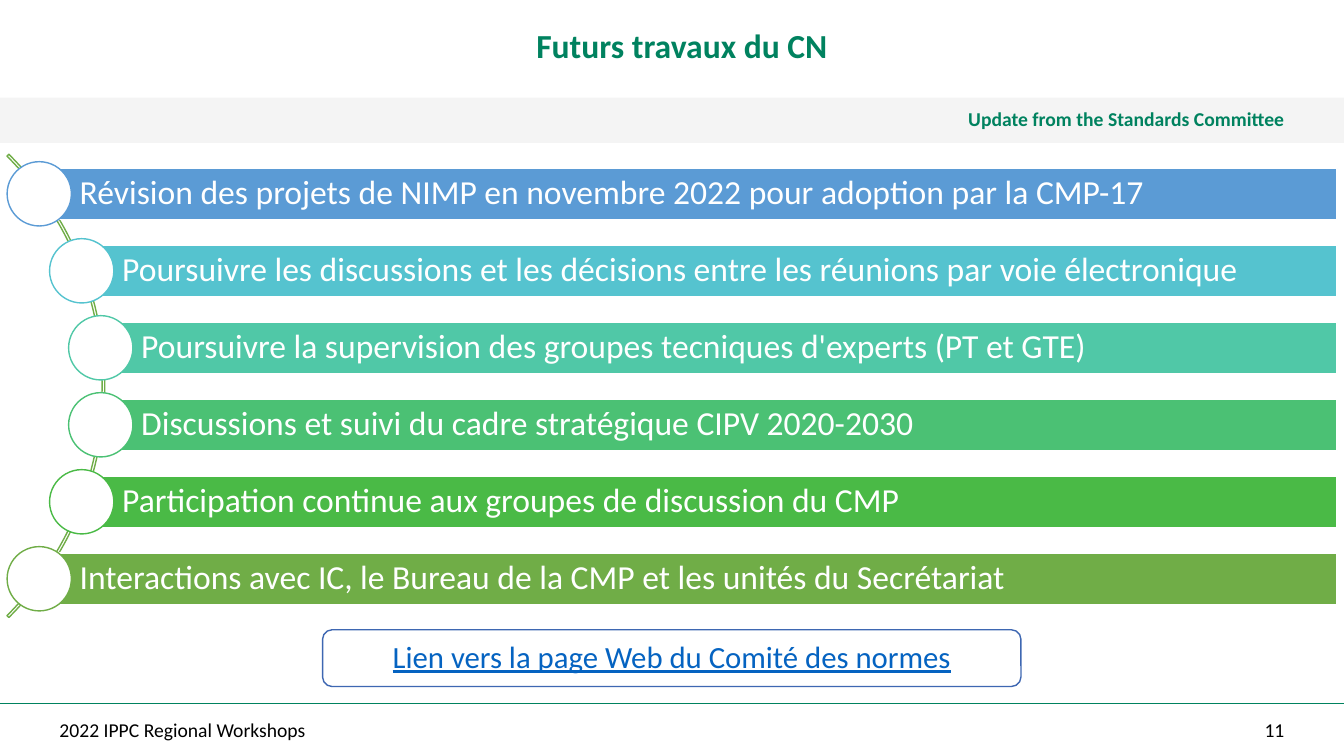
from dataclasses import dataclass

from pptx import Presentation, util as u
from pptx.dml.color import RGBColor
from pptx.enum import shapes, text
from pptx.oxml.ns import qn
from lxml import etree


@dataclass(frozen=True)
class Theme:
    font: str = "Calibri"
    green: str = "00825F"
    white: str = "FFFFFF"
    black: str = "000000"
    band: str = "E7E6E6"
    band_alpha: int = 42
    link: str = "0563C1"
    link_border: str = "3E67B2"
    arc: str = "70AD47"
    title_size: int = 24
    row_size: int = 24
    link_size: int = 22
    small_size: int = 14


THEME = Theme()
WIDTH, HEIGHT = 33.87, 19.05
MARGIN = 1.5
LEFT, CENTER, RIGHT = text.PP_ALIGN.LEFT, text.PP_ALIGN.CENTER, text.PP_ALIGN.RIGHT
SHAPE = shapes.MSO_SHAPE

ROWS = [
    ("Révision des projets de NIMP en novembre 2022 pour adoption par la CMP-17", "5B9BD5", 0.99),
    ("Poursuivre les discussions et les décisions entre les réunions par voie électronique", "55C3CF", 2.06),
    ("Poursuivre la supervision des groupes tecniques d'experts (PT et GTE)", "50C8A7", 2.54),
    ("Discussions et suivi du cadre stratégique CIPV 2020-2030", "4BC174", 2.54),
    ("Participation continue aux groupes de discussion du CMP", "4ABA46", 2.06),
    ("Interactions avec IC, le Bureau de la CMP et les unités du Secrétariat", "70AD47", 0.99),
]
ROW_TOP, ROW_PITCH, ROW_HEIGHT, ROW_RIGHT = 4.24, 1.94, 1.29, 33.7
CIRCLE = 1.62


def set_all(target, values):
    for name, value in values.items():
        setattr(target, name, value)


class SlideBuilder:
    def __init__(self, presentation, theme):
        self.theme = theme
        self.slide = presentation.slides.add_slide(presentation.slide_layouts[5])

    def add_words(self, shape, words, size, color, align=LEFT, insets=(0, 0, 0, 0), **font):
        frame = shape.text_frame
        left, top, right, bottom = map(u.Cm, insets)
        set_all(frame, {
            "word_wrap": True,
            "auto_size": text.MSO_AUTO_SIZE.NONE,
            "vertical_anchor": text.MSO_ANCHOR.MIDDLE,
            "margin_left": left, "margin_top": top,
            "margin_right": right, "margin_bottom": bottom,
        })
        frame.text = words
        paragraph = frame.paragraphs[0]
        set_all(paragraph, {"alignment": align, "line_spacing": 0.9, "space_before": u.Pt(0)})
        run_font = paragraph.runs[0].font
        set_all(run_font, {"name": self.theme.font, "size": u.Pt(size), **font})
        run_font.color.rgb = RGBColor.from_string(color)

    def title(self, words, box, **style):
        title = self.slide.shapes.title
        set_all(title, dict(zip(("left", "top", "width", "height"), map(u.Cm, box))))
        self.add_words(title, words, self.theme.title_size, self.theme.green, CENTER, **style)

    def label(self, words, box, **style):
        shape = self.slide.shapes.add_textbox(*map(u.Cm, box))
        self.add_words(shape, words, self.theme.small_size, self.theme.black, **style)

    def shape(self, kind, box, fill=None, border=None, alpha=None):
        shape = self.slide.shapes.add_shape(kind, *map(u.Cm, box))
        shape.shadow.inherit = False
        if fill:
            shape.fill.solid()
            shape.fill.fore_color.rgb = RGBColor.from_string(fill)
        else:
            shape.fill.background()
        if alpha:
            color = shape._element.spPr.find(f"{qn('a:solidFill')}/{qn('a:srgbClr')}")
            etree.SubElement(color, qn("a:alpha")).set("val", str(alpha * 1000))
        if border:
            shape.line.color.rgb = RGBColor.from_string(border)
            shape.line.width = u.Pt(1)
        else:
            shape.line.fill.background()
        return shape

    def rule(self, y, color):
        line = self.slide.shapes.add_connector(
            shapes.MSO_CONNECTOR.STRAIGHT, 0, u.Cm(y), u.Cm(WIDTH), u.Cm(y))
        line.line.color.rgb = RGBColor.from_string(color)
        line.line.width = u.Pt(1)
        etree.SubElement(line._element.spPr, qn("a:effectLst"))

    def arc(self, box, color, adjustments):
        arc = self.shape(SHAPE.BLOCK_ARC, box, border=color)
        for index, value in enumerate(adjustments):
            arc.adjustments[index] = value

    def row(self, words, color, left, top):
        theme = self.theme
        bar = self.shape(SHAPE.RECTANGLE, (left, top, ROW_RIGHT - left, ROW_HEIGHT), color, theme.white)
        self.add_words(bar, words, theme.row_size, theme.white, insets=(1.02, 0.18, 0.18, 0.18))
        circle_top = top + (ROW_HEIGHT - CIRCLE) / 2
        self.shape(SHAPE.OVAL, (left - CIRCLE / 2, circle_top, CIRCLE, CIRCLE), theme.white, color)


def main():
    presentation = Presentation()
    set_all(presentation, {"slide_width": u.Cm(WIDTH), "slide_height": u.Cm(HEIGHT)})
    builder = SlideBuilder(presentation, THEME)
    edges = (MARGIN, 0.13, MARGIN, 0.13)

    builder.rule(17.73, THEME.green)
    builder.label("2022 IPPC Regional Workshops", (0, 17.93, 20.96, 0.97), insets=edges)
    builder.label("11", (30.27, 17.93, 3.6, 0.97), align=RIGHT, insets=edges)
    band = builder.shape(SHAPE.RECTANGLE, (0, 2.46, WIDTH, 1.14), THEME.band, alpha=THEME.band_alpha)
    builder.add_words(band, "Update from the Standards Committee", THEME.small_size, THEME.green,
                      RIGHT, edges, bold=True)
    builder.title("Futurs travaux du CN", (0, 0, WIDTH, 2.54), insets=(MARGIN, 0, 1, 0.13), bold=True)

    builder.arc((-13.87, 1.47, 16.51, 16.51), THEME.arc, (189, 27, 0.004))
    for index, (words, color, left) in enumerate(ROWS):
        builder.row(words, color, left, ROW_TOP + index * ROW_PITCH)

    link = builder.shape(SHAPE.ROUNDED_RECTANGLE, (8.13, 15.87, 17.6, 1.43), THEME.white, THEME.link_border)
    builder.add_words(link, "Lien vers la page Web du Comité des normes", THEME.link_size, THEME.link,
                      CENTER, (0.23, 0.23, 0.23, 0.23), underline=True)
    presentation.save("out.pptx")


if __name__ == "__main__":
    main()
